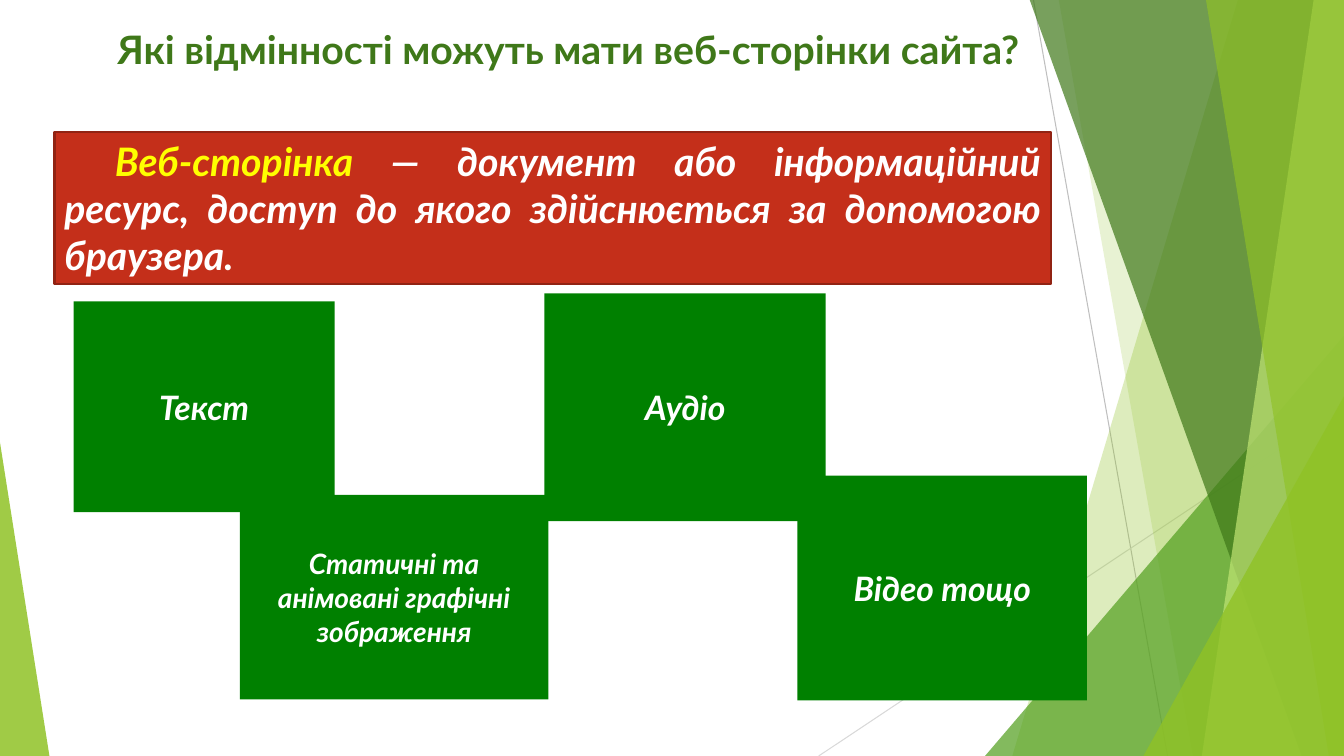
from lxml import etree
from pptx import Presentation
from pptx.dml.color import RGBColor
from pptx.enum.shapes import MSO_CONNECTOR, MSO_SHAPE
from pptx.enum.text import MSO_ANCHOR, PP_ALIGN
from pptx.oxml.ns import qn
from pptx.util import Pt

PX = 9144  # 100 px to the inch
WIDTH, HEIGHT = 1333, 750
FONT = "Lato"
STRAIGHT = MSO_CONNECTOR.STRAIGHT
RECTANGLE, TRIANGLE = MSO_SHAPE.RECTANGLE, MSO_SHAPE.ISOSCELES_TRIANGLE
CENTER, JUSTIFY = PP_ALIGN.CENTER, PP_ALIGN.JUSTIFY
TOP, MIDDLE = MSO_ANCHOR.TOP, MSO_ANCHOR.MIDDLE

LIME, GREEN, DARK_GREEN, PALE_LIME = "90C226", "54A021", "3F7819", "C0E474"
TILE_GREEN, RED, DARK_RED = "008000", "C42F1A", "912313"
WHITE, YELLOW = "FFFFFF", "FFFF00"

TILES = [
    ("Текст", 24, (73, 299, 259, 209)),
    ("Статичні та анімовані графічні зображення", 20, (238, 491, 306, 203)),
    ("Аудіо", 24, (540, 291, 279, 226)),
    ("Відео тощо", 24, (791, 472, 287, 223)),
]


def emu(*lengths):
    return [length * PX for length in lengths]


def paint(target, color):
    """Fill a shape or a line with a solid colour, or colour a font."""
    if hasattr(target, "fill"):
        target.fill.solid()
        target.fill.fore_color.rgb = RGBColor.from_string(color)
    else:
        target.color.rgb = RGBColor.from_string(color)


def finish(shape, color, opacity=100):
    """Give a shape a flat fill with no outline or shadow."""
    shape.shadow.inherit = False
    shape.line.fill.background()
    paint(shape, color)
    if opacity < 100:
        fill_color = shape.fill._xPr.find(qn("a:solidFill"))[0]
        etree.SubElement(fill_color, qn("a:alpha"), val=str(opacity * 1000))


def add_thin_line(page, start, end, color):
    line = page.shapes.add_connector(STRAIGHT, *emu(*start, *end))
    line.line.width = Pt(0.75)
    paint(line.line, color)
    etree.SubElement(line._element.spPr, qn("a:effectLst"))


def add_facet(page, top_x, bottom_x, color, opacity):
    """Add a full-height band that reaches the right edge of the slide."""
    builder = page.shapes.build_freeform(top_x, -1, scale=PX)
    builder.add_line_segments([(WIDTH, -1), (WIDTH, HEIGHT), (bottom_x, HEIGHT)])
    finish(builder.convert_to_shape(), color, opacity)


def add_corner(page, box, apex, color, opacity):
    corner = page.shapes.add_shape(TRIANGLE, *emu(*box))
    corner.adjustments[0] = apex
    finish(corner, color, opacity)


def add_backdrop(page):
    add_thin_line(page, (1025, 0), (1158, HEIGHT), "BFBFBF")
    add_thin_line(page, (WIDTH, 403), (812, HEIGHT), "D9D9D9")
    add_facet(page, 1228, 1004, LIME, 30)
    add_facet(page, 1050, 1183, LIME, 20)
    add_corner(page, (977, 333, 356, 417), 1, GREEN, 72)
    add_facet(page, 1021, 1291, DARK_GREEN, 70)
    add_facet(page, 1303, 1192, PALE_LIME, 70)
    add_facet(page, 1196, 1318, LIME, 65)
    add_corner(page, (1134, 393, 199, 357), 1, LIME, 80)
    add_corner(page, (0, 439, 49, 311), 0, LIME, 85)


def write(shape, spans, size, align, anchor, italic=True):
    """Write one paragraph from (text, colour) spans and return it."""
    frame = shape.text_frame
    frame.word_wrap = True
    frame.vertical_anchor = anchor
    para = frame.paragraphs[0]
    para.alignment = align
    for text, color in spans:
        span = para.add_run()
        span.text = text
        font = span.font
        font.name, font.size = FONT, Pt(size)
        font.bold, font.italic = True, italic
        paint(font.fill, color) if hasattr(font.fill, "fill") else paint(font, color)
    return para


def add_title(page, box):
    title = page.shapes.add_textbox(*emu(*box))
    spans = [("Які відмінності можуть мати веб-сторінки сайта?", DARK_GREEN)]
    para = write(title, spans, 28, CENTER, TOP, italic=False)
    outline = etree.Element(qn("a:ln"), w=str(Pt(1.75)))
    fill = etree.SubElement(outline, qn("a:solidFill"))
    etree.SubElement(fill, qn("a:srgbClr"), val=GREEN)
    para.runs[0].font._element.insert(0, outline)


def add_definition(page, box):
    panel = page.shapes.add_shape(RECTANGLE, *emu(*box))
    finish(panel, RED)
    paint(panel.line, DARK_RED)
    panel.line.width = Pt(1.5)
    spans = [
        ("Веб-сторінка", YELLOW),
        (" — документ або інформаційний ресурс, доступ до якого "
         "здійснюється за допомогою браузера. ", WHITE),
    ]
    para = write(panel, spans, 28, JUSTIFY, TOP)
    para._p.get_or_add_pPr().set("indent", str(50 * PX))


def add_tile(page, text, size, box):
    tile = page.shapes.add_shape(RECTANGLE, *emu(*box))
    finish(tile, TILE_GREEN)
    write(tile, [(text, WHITE)], size, CENTER, MIDDLE)


def main():
    deck = Presentation()
    deck.slide_width, deck.slide_height = emu(WIDTH, HEIGHT)
    page = deck.slides.add_slide(deck.slide_layouts[6])
    add_backdrop(page)
    add_title(page, (54, 20, 1019, 76))
    add_definition(page, (54, 131, 988, 151))
    for text, size, box in TILES:
        add_tile(page, text, size, box)
    deck.save("out.pptx")


if __name__ == "__main__":
    main()
